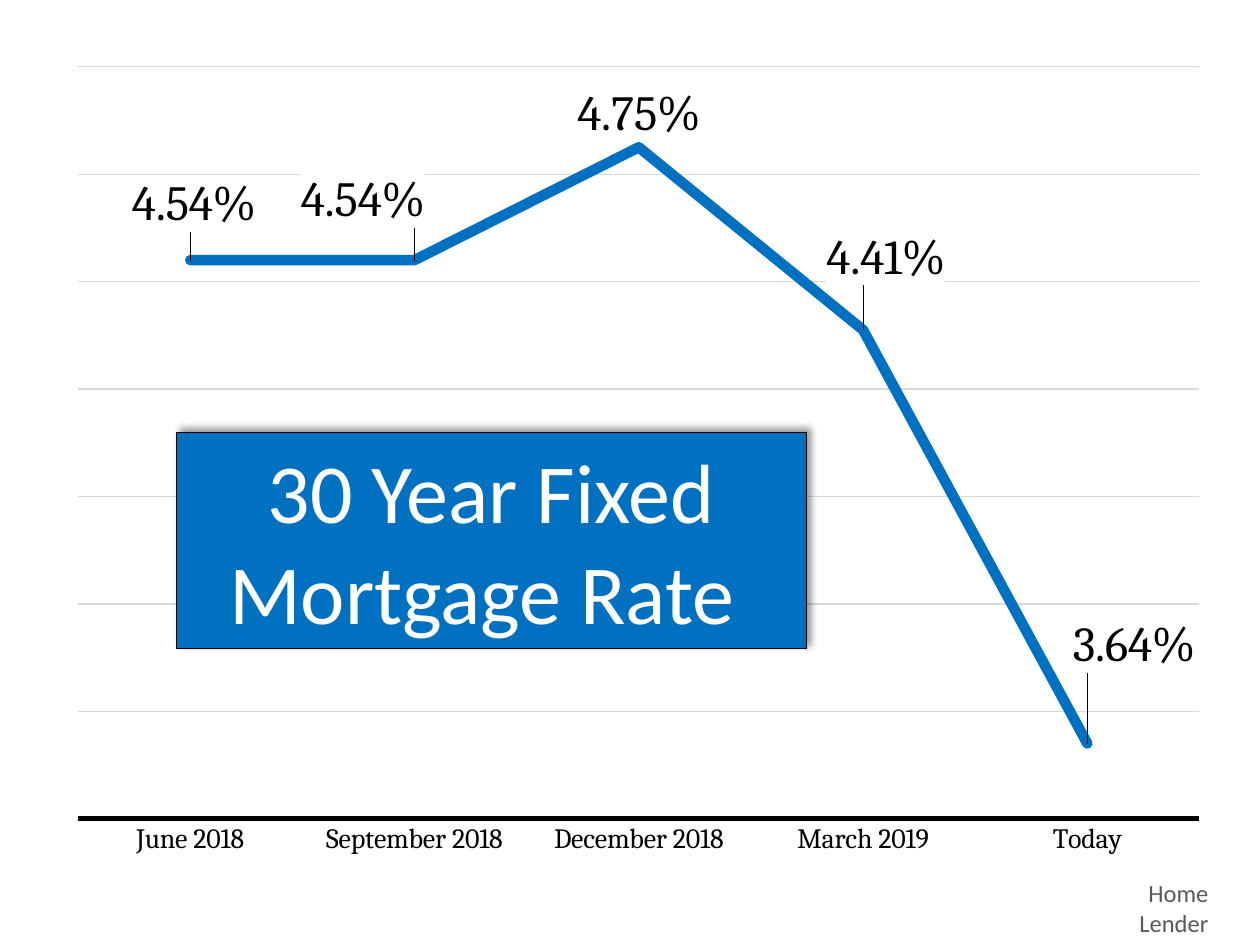
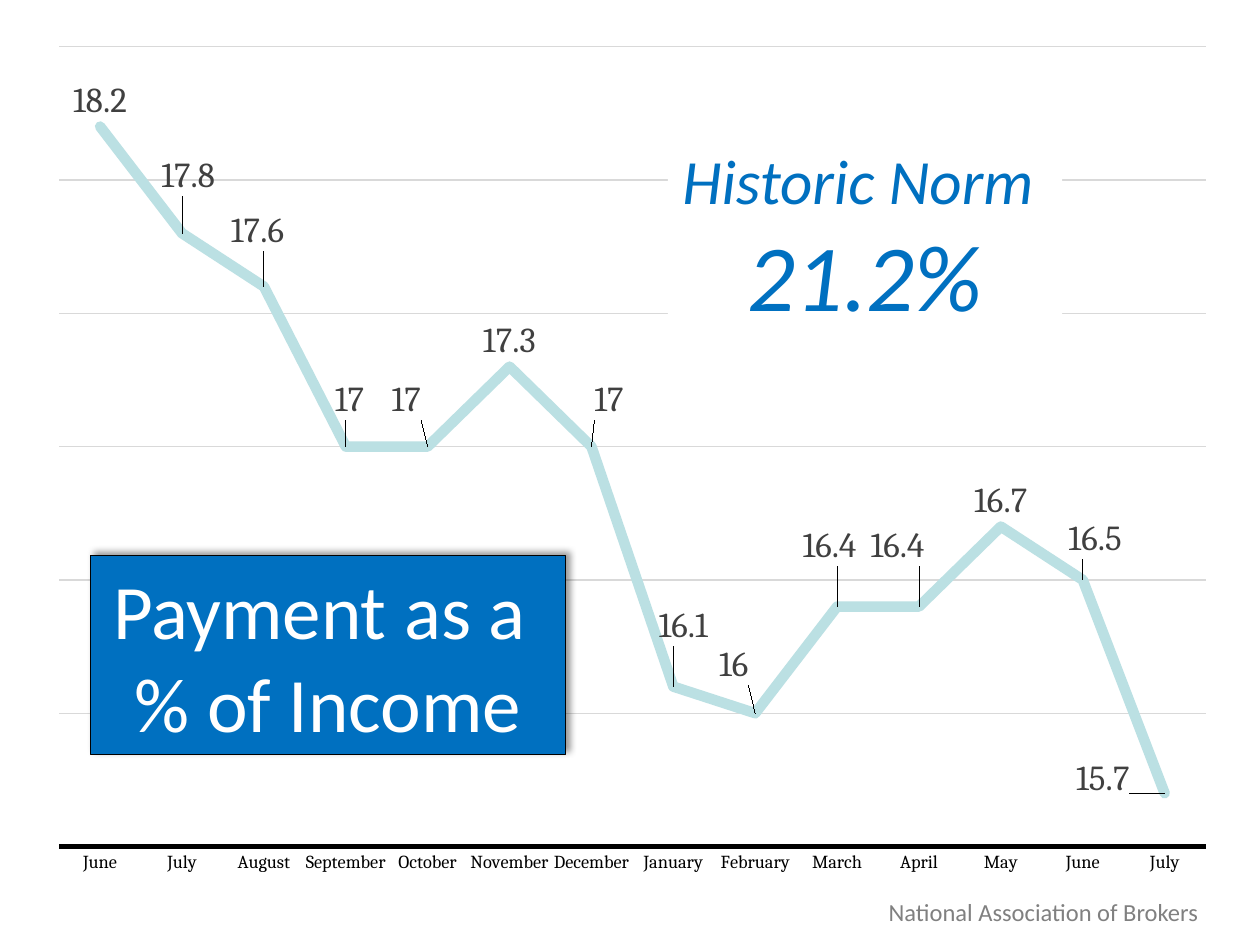
"""Build two line-chart slides on mortgage rates and payment burden."""
from dataclasses import dataclass

import pptx
import pptx.chart.data
import pptx.dml.color
import pptx.enum.chart
import pptx.enum.shapes
import pptx.enum.text
import pptx.oxml
import pptx.oxml.ns
import pptx.util
from pptx.util import Inches


@dataclass(frozen=True)
class Theme:
    """Colours, fonts and type sizes shared by the slides."""
    blue: str = "0070C0"
    pale_teal: str = "BBE0E3"
    white: str = "FFFFFF"
    black: str = "000000"
    grid: str = "D9D9D9"
    label_gray: str = "404040"
    dark_gray: str = "595959"
    mid_gray: str = "808080"
    text_font: str = "Calibri"
    chart_font: str = "Cambria"
    source_size: float = 14
    norm_size: float = 36
    norm_value_size: float = 54
    hairline: float = 0.75
    axis_line: float = 3
    series_line: float = 6


THEME = Theme()


def rgb(value):
    """Turn a hex string into a colour."""
    return pptx.dml.color.RGBColor.from_string(value)


def xml(tag, body="", attrs=""):
    """Parse one element with the drawing and chart namespaces."""
    return pptx.oxml.parse_xml(
        f'<{tag} {pptx.oxml.ns.nsdecls("a", "c")} {attrs}>{body}</{tag}>')


def set_font(font, size, color, name=THEME.text_font, italic=False):
    """Set the face, size and colour of a font."""
    font.name, font.size, font.italic = name, pptx.util.Pt(size), italic
    font.color.rgb = rgb(color)


def set_line(line, color, width):
    """Set a solid line."""
    line.color.rgb = rgb(color)
    line.width = pptx.util.Pt(width)


def add_text(tf, text, align="CENTER", **fmt):
    """Add one formatted paragraph to a text frame."""
    p = tf.add_paragraph() if tf.text else tf.paragraphs[0]
    p.alignment = getattr(pptx.enum.text.PP_ALIGN, align)
    r = p.add_run()
    r.text = text
    set_font(r.font, **fmt)


def add_source(s, text, box, color):
    """Add the right-aligned source line under a chart."""
    sp = s.shapes.add_textbox(*map(Inches, box))
    sp.text_frame.word_wrap = False
    add_text(sp.text_frame, text, "RIGHT", size=THEME.source_size, color=color)


def add_box(s, box, fill):
    """Add a plain filled rectangle."""
    sp = s.shapes.add_shape(pptx.enum.shapes.MSO_SHAPE.RECTANGLE, *map(Inches, box))
    sp.shadow.inherit = False
    sp.fill.solid()
    sp.fill.fore_color.rgb = rgb(fill)
    sp.line.fill.background()
    sp.text_frame.word_wrap = True
    return sp


def add_callout(s, lines, box, size):
    """Add the blue title box with its shadow."""
    sp = add_box(s, box, THEME.blue)
    set_line(sp.line, THEME.black, THEME.hairline)
    effects = sp._element.spPr.find(pptx.oxml.ns.qn("a:effectLst"))
    effects.append(xml(
        "a:outerShdw",
        f'<a:srgbClr val="{THEME.black}"><a:alpha val="40000"/></a:srgbClr>',
        f'blurRad="{pptx.util.Pt(4)}" dist="{pptx.util.Pt(3)}" dir="{315 * 60000}" '
        'algn="bl" rotWithShape="0"'))
    for line in lines:
        add_text(sp.text_frame, line, size=size, color=THEME.white)


def set_layout(parent, index, values, inner=False):
    """Give a chart element a manual layout in fractions of the chart."""
    for old in parent.findall(pptx.oxml.ns.qn("c:layout")):
        parent.remove(old)
    body = ""
    if inner:
        body = ('<c:layoutTarget val="inner"/><c:xMode val="edge"/>'
                '<c:yMode val="edge"/>')
    body += "".join(f'<c:{k} val="{v:.4f}"/>' for k, v in zip("xywh", values))
    parent.insert(index, xml("c:layout", f"<c:manualLayout>{body}</c:manualLayout>"))


def style_labels(series, size, color, number_format, offsets, extent, fill):
    """Show values above the points and shift chosen labels by inches."""
    above = pptx.enum.chart.XL_LABEL_POSITION.ABOVE
    labels = series.data_labels
    labels.show_value, labels.position = True, above
    labels.number_format, labels.number_format_is_linked = number_format, False
    set_font(labels.font, size, color, THEME.chart_font)
    for i, shift in offsets.items():
        label = series.points[i].data_label
        set_font(label.font, size, color, THEME.chart_font)
        label.position = above
        dLbl = series._element.xpath(f"c:dLbls/c:dLbl[c:idx/@val='{i}']")[0]
        set_layout(dLbl, 1, [d / e for d, e in zip(shift, extent)])
        if fill:
            for old in dLbl.findall(pptx.oxml.ns.qn("c:spPr")):
                dLbl.remove(old)
            dLbl.find(pptx.oxml.ns.qn("c:txPr")).addprevious(xml(
                "c:spPr", f'<a:solidFill><a:srgbClr val="{fill}"/></a:solidFill>'))


def add_line_chart(s, box, plot, cats, vals, scale, color, cat_size, label_size,
                   label_color, offsets, number_format="General", label_fill=None):
    """Add a line chart with a hidden value axis; plot is placed in slide inches."""
    data = pptx.chart.data.CategoryChartData(number_format=number_format)
    data.categories = cats
    data.add_series("Series 1", vals)
    chart = s.shapes.add_chart(
        pptx.enum.chart.XL_CHART_TYPE.LINE, *map(Inches, box), data).chart
    chart.has_legend = chart.has_title = False
    set_font(chart.font, 10, THEME.black, THEME.chart_font)

    left, top, width, height = box
    set_layout(chart._chartSpace.chart.plotArea, 0, [
        (plot[0] - left) / width, (plot[1] - top) / height,
        plot[2] / width, plot[3] / height], inner=True)

    axis = chart.value_axis
    axis.minimum_scale, axis.maximum_scale, axis.major_unit = scale
    axis.has_major_gridlines = True
    set_line(axis.major_gridlines.format.line, THEME.grid, THEME.hairline)
    axis.visible = False

    axis = chart.category_axis
    axis.major_tick_mark = pptx.enum.chart.XL_TICK_MARK.NONE
    set_line(axis.format.line, THEME.black, THEME.axis_line)
    set_font(axis.tick_labels.font, cat_size, THEME.black, THEME.chart_font)

    chart.plots[0].vary_by_categories = False
    series = chart.plots[0].series[0]
    series.smooth = False
    series.marker.style = pptx.enum.chart.XL_MARKER_STYLE.NONE
    set_line(series.format.line, color, THEME.series_line)
    series._element.xpath("c:spPr/a:ln")[0].set("cap", "rnd")
    style_labels(series, label_size, label_color, number_format, offsets,
                 (width, height), label_fill)


def mortgage_rate_slide(s):
    """Fill the slide on the 30 year fixed mortgage rate."""
    add_line_chart(
        s, (0.43, 0.4, 9.28, 6.52), (0.62, 0.53, 8.9, 5.97),
        ["June 2018", "September 2018", "December 2018", "March 2019", "Today"],
        [0.0454, 0.0454, 0.0475, 0.0441, 0.0364], (0.035, 0.049, 0.002),
        THEME.blue, cat_size=16, label_size=28, label_color=THEME.black,
        offsets={0: (0.03, -0.18), 1: (-0.41, -0.21), 3: (0.18, -0.31),
                 4: (0.37, -0.52)},
        number_format="0.00%", label_fill=THEME.white)
    add_source(s, "Home Lender", (8.49, 6.92, 1.2, 0.34), THEME.dark_gray)
    add_callout(s, ["30 Year Fixed Mortgage Rate "], (1.4, 3.43, 5, 1.72), 48)


def payment_slide(s):
    """Fill the slide on payment as a share of income."""
    add_source(s, "National Association of Brokers", (6.87, 7.07, 2.74, 0.34),
               THEME.mid_gray)
    add_line_chart(
        s, (0.28, 0.23, 9.48, 6.84), (0.47, 0.37, 9.1, 6.35),
        ["June", "July", "August", "September", "October", "November", "December",
         "January", "February", "March", "April", "May", "June", "July"],
        [18.2, 17.8, 17.6, 17, 17, 17.3, 17, 16.1, 16, 16.4, 16.4, 16.7, 16.5, 15.7],
        (15.5, 18.5, 0.5), THEME.pale_teal, cat_size=10.5, label_size=20,
        label_color=THEME.label_gray,
        offsets={1: (0.05, -0.25), 2: (-0.05, -0.24), 3: (0.03, -0.17),
                 4: (-0.17, -0.17), 6: (0.14, -0.17), 7: (0.08, -0.28),
                 8: (-0.17, -0.18), 9: (-0.06, -0.28), 10: (-0.17, -0.28),
                 12: (0.1, -0.12), 13: (-0.49, 0.09)})
    add_callout(s, ["Payment as a ", "% of Income"], (0.72, 4.41, 3.77, 1.58), 44)
    norm = add_box(s, (5.3, 1.06, 3.13, 1.62), THEME.white)
    norm.text_frame.word_wrap = False
    for text, size in (("Historic Norm ", THEME.norm_size),
                       ("21.2%", THEME.norm_value_size)):
        add_text(norm.text_frame, text, size=size, color=THEME.blue, italic=True)


def main():
    """Build and save the presentation."""
    prs = pptx.Presentation()
    prs.slide_width, prs.slide_height = Inches(10), Inches(7.5)
    for fill_slide in (mortgage_rate_slide, payment_slide):
        fill_slide(prs.slides.add_slide(prs.slide_layouts[6]))
    prs.save("out.pptx")


if __name__ == "__main__":
    main()
